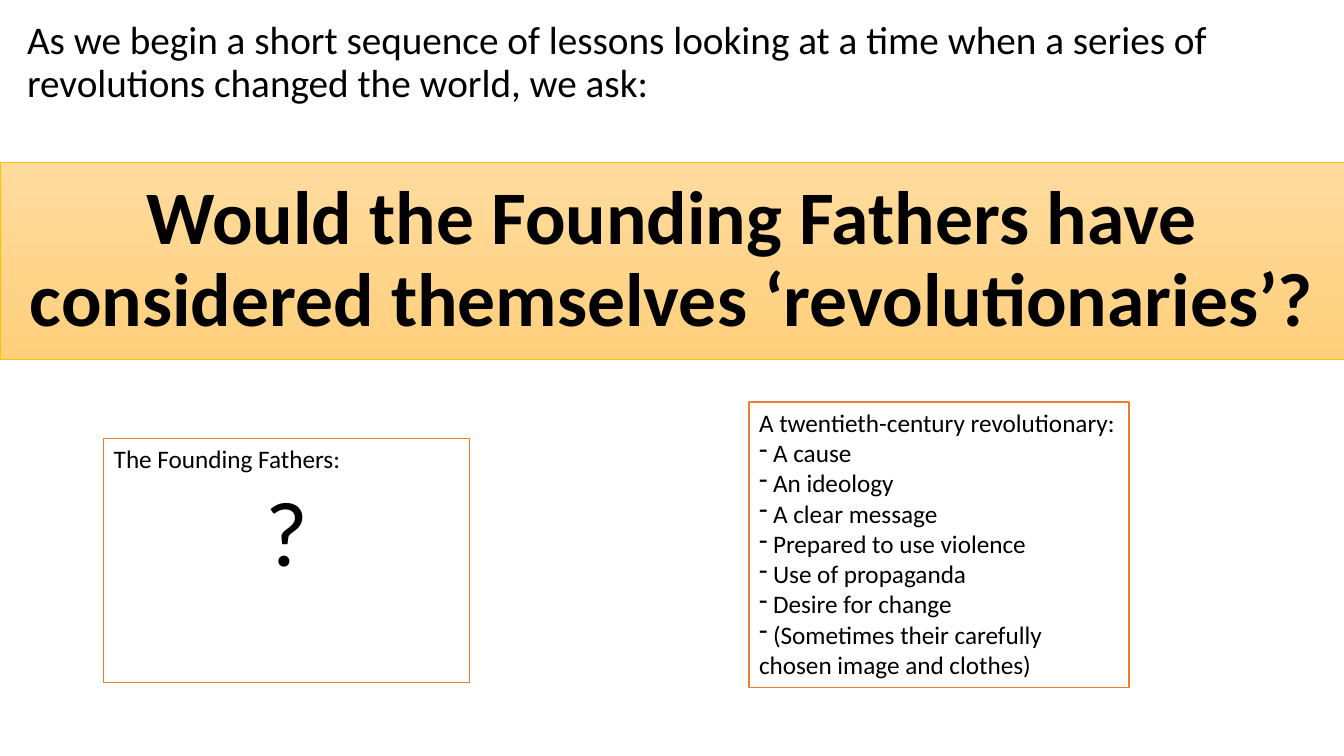
from lxml import etree
from pptx import Presentation
from pptx.dml.color import RGBColor
from pptx.enum.shapes import MSO_SHAPE
from pptx.enum.text import MSO_ANCHOR, MSO_AUTO_SIZE, PP_ALIGN
from pptx.oxml.ns import qn
from pptx.util import Inches, Pt

BLACK = RGBColor(0x00, 0x00, 0x00)
WHITE = RGBColor(0xFF, 0xFF, 0xFF)
ORANGE = RGBColor(0xED, 0x7D, 0x31)
GOLD = RGBColor(0xFF, 0xC0, 0x00)
BANNER_TOP = RGBColor(0xFF, 0xDB, 0x9E)
BANNER_BOTTOM = RGBColor(0xFF, 0xD0, 0x7C)
FONT = "Calibri"
SLIDE_WIDTH, SLIDE_HEIGHT = 13.33, 7.5

TRAITS = [
    "A cause",
    "An ideology",
    "A clear message",
    "Prepared to use violence",
    "Use of propaganda",
    "Desire for change",
    "(Sometimes their carefully chosen image and clothes)",
]


def place(shape, box):
    for name, length in zip(("left", "top", "width", "height"), box):
        setattr(shape, name, Inches(length))


def write(paragraph, text, size, bold=False, **paragraph_format):
    run = paragraph.add_run()
    run.text = text
    font_format = {"name": FONT, "size": Pt(size), "bold": bold}
    for name, value in font_format.items():
        setattr(run.font, name, value)
    run.font.color.rgb = BLACK
    for name, value in paragraph_format.items():
        setattr(paragraph, name, value)


def add_dash(paragraph):
    properties = paragraph._p.get_or_add_pPr()
    properties.set("marL", "0")
    properties.set("indent", "0")
    etree.SubElement(properties, qn("a:buFontTx"))
    etree.SubElement(properties, qn("a:buChar")).set("char", "-")


def format_banner(title, box):
    """Key question on a full-width gradient band."""
    place(title, box)
    title.fill.gradient()
    title.fill.gradient_angle = 270
    for stop, color in zip(title.fill.gradient_stops, (BANNER_TOP, BANNER_BOTTOM)):
        stop.color.rgb = color
    title.line.color.rgb = GOLD
    title.line.width = Pt(0.5)
    frame = title.text_frame
    frame.auto_size = MSO_AUTO_SIZE.NONE
    frame.vertical_anchor = MSO_ANCHOR.MIDDLE
    write(frame.paragraphs[0],
          "Would the Founding Fathers have considered themselves ‘revolutionaries’?",
          54, bold=True, alignment=PP_ALIGN.CENTER, line_spacing=0.9)


def add_introduction(slide, box):
    """Opening sentence above the banner."""
    frame = slide.shapes.add_textbox(*map(Inches, box)).text_frame
    frame.word_wrap = True
    write(frame.paragraphs[0],
          "As we begin a short sequence of lessons looking at a time when "
          "a series of revolutions changed the world, we ask:",
          28, line_spacing=0.9, space_before=Pt(10))


def add_panel(slide, box, heading):
    """Outlined panel with a heading; returns its text frame."""
    panel = slide.shapes.add_shape(MSO_SHAPE.RECTANGLE, *map(Inches, box))
    panel.shadow.inherit = False
    panel.fill.solid()
    panel.fill.fore_color.rgb = WHITE
    panel.line.color.rgb = ORANGE
    panel.line.width = Pt(1)
    frame = panel.text_frame
    frame.word_wrap = True
    frame.auto_size = MSO_AUTO_SIZE.SHAPE_TO_FIT_TEXT
    frame.vertical_anchor = MSO_ANCHOR.TOP
    write(frame.paragraphs[0], heading, 18, alignment=PP_ALIGN.LEFT)
    return frame


def add_revolutionary_panel(slide, box):
    frame = add_panel(slide, box, "A twentieth-century revolutionary:")
    for trait in TRAITS:
        paragraph = frame.add_paragraph()
        write(paragraph, " " + trait, 18, alignment=PP_ALIGN.LEFT)
        add_dash(paragraph)


def add_founders_panel(slide, box):
    frame = add_panel(slide, box, "The Founding Fathers:")
    frame.auto_size = MSO_AUTO_SIZE.NONE
    write(frame.add_paragraph(), "?", 66, alignment=PP_ALIGN.CENTER)


def main():
    presentation = Presentation()
    presentation.slide_width = Inches(SLIDE_WIDTH)
    presentation.slide_height = Inches(SLIDE_HEIGHT)
    slide = presentation.slides.add_slide(presentation.slide_layouts[5])

    format_banner(slide.shapes.title, (0, 1.61, SLIDE_WIDTH, 1.96))
    add_introduction(slide, (0.17, 0.16, 12.9, 1.46))
    add_revolutionary_panel(slide, (7.43, 3.99, 3.77, 2.83))
    add_founders_panel(slide, (1.03, 4.35, 3.63, 2.42))

    presentation.save("out.pptx")


if __name__ == "__main__":
    main()
